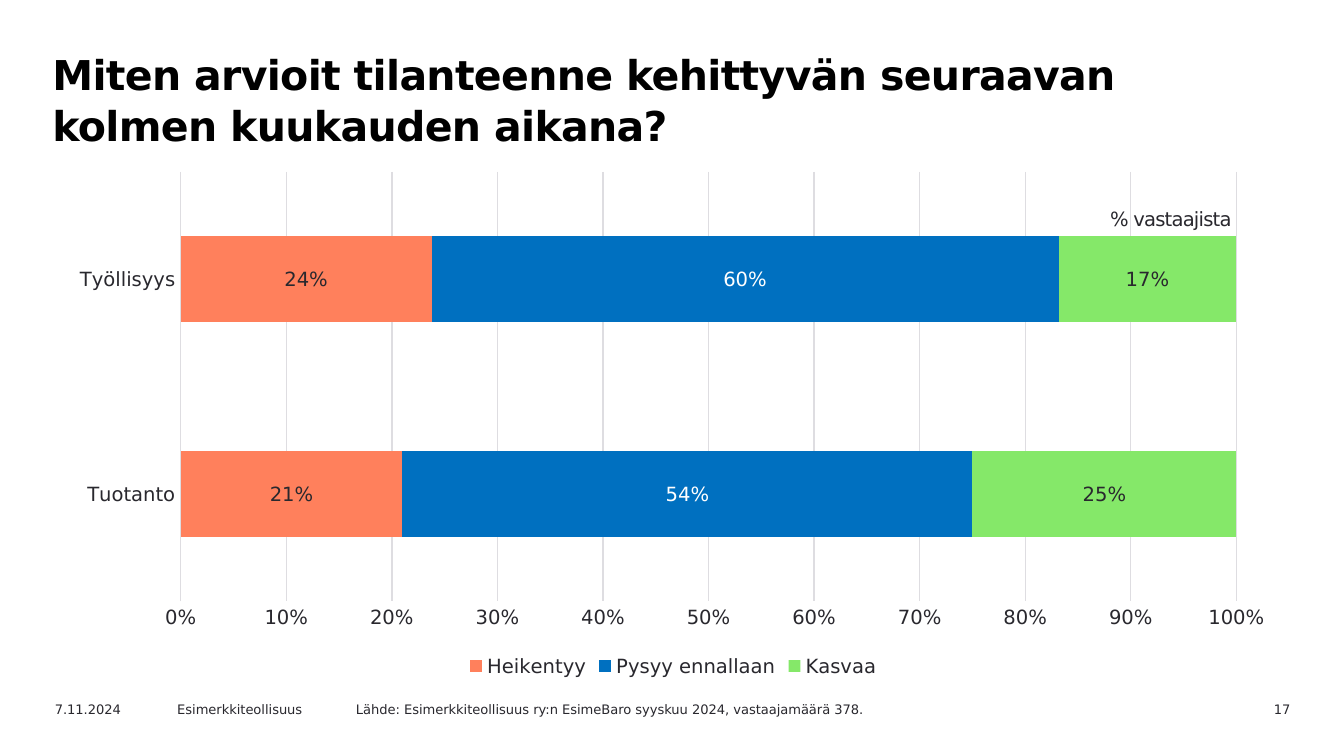
"""Build a survey slide with a stacked percentage bar chart."""
from typing import NamedTuple

from lxml import etree
from pptx import Presentation
from pptx.chart.data import CategoryChartData
from pptx.dml.color import RGBColor
from pptx.enum.chart import XL_CHART_TYPE, XL_LEGEND_POSITION, XL_TICK_MARK
from pptx.enum.text import MSO_ANCHOR, PP_ALIGN
from pptx.oxml.ns import qn
from pptx.util import Pt

PX = 4572
FONT = "DejaVu Sans"
BLACK = RGBColor(0x00, 0x00, 0x00)
INK = RGBColor(0x29, 0x28, 0x2E)
WHITE = RGBColor(0xFF, 0xFF, 0xFF)
GRID = RGBColor(0xDE, 0xDD, 0xE1)
CORAL = RGBColor(0xFF, 0x80, 0x5C)
BLUE = RGBColor(0x00, 0x70, 0xC0)
GREEN = RGBColor(0x85, 0xE8, 0x69)
LEFT, RIGHT = PP_ALIGN.LEFT, PP_ALIGN.RIGHT
TOP = MSO_ANCHOR.TOP
BAR = XL_CHART_TYPE.BAR_STACKED_100
BOTTOM = XL_LEGEND_POSITION.BOTTOM
NO_TICK = XL_TICK_MARK.NONE
FOOTER_TOP, FOOTER_HEIGHT = 1034, 36


class Box(NamedTuple):
    left: int
    top: int
    width: int
    height: int


class Footer(NamedTuple):
    text: str
    left: int
    width: int
    align: PP_ALIGN = LEFT


class Answer(NamedTuple):
    name: str
    values: tuple[float, float]
    fill: RGBColor
    label: RGBColor = INK


CHART = Box(84, 242, 1836, 774)
PLOT = Box(269, 256, 1571, 639)
FOOTERS = (
    Footer("7.11.2024", 62, 200),
    Footer("Esimerkkiteollisuus", 244, 284),
    Footer("Lähde: Esimerkkiteollisuus ry:n EsimeBaro syyskuu 2024, "
           "vastaajamäärä 378.", 510, 994),
    Footer("17", 1752, 188, RIGHT),
)
ANSWERS = (
    Answer("Heikentyy", (0.21, 0.24), CORAL),
    Answer("Pysyy ennallaan", (0.54, 0.60), BLUE, WHITE),
    Answer("Kasvaa", (0.25, 0.17), GREEN),
)


def set_font(font, size: float = 10.5, color: RGBColor = INK, bold: bool = False) -> None:
    """Apply the slide's typeface to a font."""
    font.name, font.size, font.bold = FONT, Pt(size), bold
    font.color.rgb = color


def write(sp, text: str, *, size: float, color: RGBColor = INK, bold: bool = False,
          align: PP_ALIGN = LEFT, inset: tuple[int, int] = (20, 10),
          spacing: int = 0, line: int | None = None) -> None:
    """Fill a shape with one formatted paragraph."""
    tf = sp.text_frame
    tf.word_wrap, tf.vertical_anchor = True, TOP
    tf.margin_left = tf.margin_right = inset[0] * PX
    tf.margin_top = tf.margin_bottom = inset[1] * PX
    p = tf.paragraphs[0]
    p.alignment = align
    if line:
        p.line_spacing = Pt(line)
    r = p.add_run()
    r.text = text
    set_font(r.font, size, color, bold)
    if spacing:
        r.font._element.set("spc", str(spacing))


def place(sp, box: Box) -> None:
    """Move and size a shape in px."""
    sp.left, sp.top, sp.width, sp.height = (v * PX for v in box)


def add_text(slide, box: Box, text: str, **fmt) -> None:
    """Add a formatted text box."""
    sp = slide.shapes.add_textbox(0, 0, 0, 0)
    place(sp, box)
    write(sp, text, **fmt)


def set_plot_area(chart, outer: Box, inner: Box) -> None:
    """Fix the inner plot area within the chart."""
    area = chart._chartSpace.chart.plotArea
    for old in area.findall(qn("c:layout")):
        area.remove(old)
    layout = etree.Element(qn("c:layout"))
    area.insert(0, layout)
    manual = etree.SubElement(layout, qn("c:manualLayout"))
    settings = (("layoutTarget", "inner"), ("xMode", "edge"), ("yMode", "edge"),
                ("x", (inner.left - outer.left) / outer.width),
                ("y", (inner.top - outer.top) / outer.height),
                ("w", inner.width / outer.width),
                ("h", inner.height / outer.height))
    for tag, value in settings:
        etree.SubElement(manual, qn(f"c:{tag}")).set("val", str(value))


def add_answer_chart(slide, box: Box, plot_box: Box) -> None:
    """Add the stacked bars of the answers."""
    data = CategoryChartData(number_format="0%")
    data.categories = ["Tuotanto", "Työllisyys"]
    for answer in ANSWERS:
        data.add_series(answer.name, answer.values)
    chart = slide.shapes.add_chart(BAR, *(v * PX for v in box), data).chart
    set_font(chart.font)
    chart.has_title = False
    chart.has_legend = True
    chart.legend.position, chart.legend.include_in_layout = BOTTOM, False
    set_font(chart.legend.font)
    set_plot_area(chart, box, plot_box)

    plot = chart.plots[0]
    plot.gap_width, plot.overlap, plot.vary_by_categories = 150, 100, False
    for series, answer in zip(plot.series, ANSWERS):
        series.format.fill.solid()
        series.format.fill.fore_color.rgb = answer.fill
        labels = series.data_labels
        labels.show_value = True
        labels.number_format, labels.number_format_is_linked = "0%", False
        set_font(labels.font, color=answer.label)

    cat, val = chart.category_axis, chart.value_axis
    for axis in (cat, val):
        axis.major_tick_mark = axis.minor_tick_mark = NO_TICK
        set_font(axis.tick_labels.font)
    val.minimum_scale, val.maximum_scale, val.major_unit = 0, 1, 0.1
    val.tick_labels.number_format = "0%"
    val.tick_labels.number_format_is_linked = False
    val.has_major_gridlines = True
    val.format.line.fill.background()
    for line in (cat.format.line, val.major_gridlines.format.line):
        line.color.rgb, line.width = GRID, Pt(0.75)


def main() -> None:
    """Build and save the slide."""
    prs = Presentation()
    prs.slide_width, prs.slide_height = 2000 * PX, 1125 * PX
    slide = prs.slides.add_slide(prs.slide_layouts[5])
    title = slide.shapes.title
    place(title, Box(56, 62, 1748, 142))
    write(title, "Miten arvioit tilanteenne kehittyvän seuraavan kolmen kuukauden aikana?",
          size=22, color=BLACK, bold=True, inset=(22, 10), spacing=-35, line=27)
    add_answer_chart(slide, CHART, PLOT)
    for footer in FOOTERS:
        add_text(slide, Box(footer.left, FOOTER_TOP, footer.width, FOOTER_HEIGHT),
                 footer.text, size=7, align=footer.align)
    add_text(slide, Box(1644, 300, 318, 52), "% vastaajista",
             size=10.5, inset=(8, 8), spacing=-40)
    prs.save("out.pptx")


if __name__ == "__main__":
    main()
